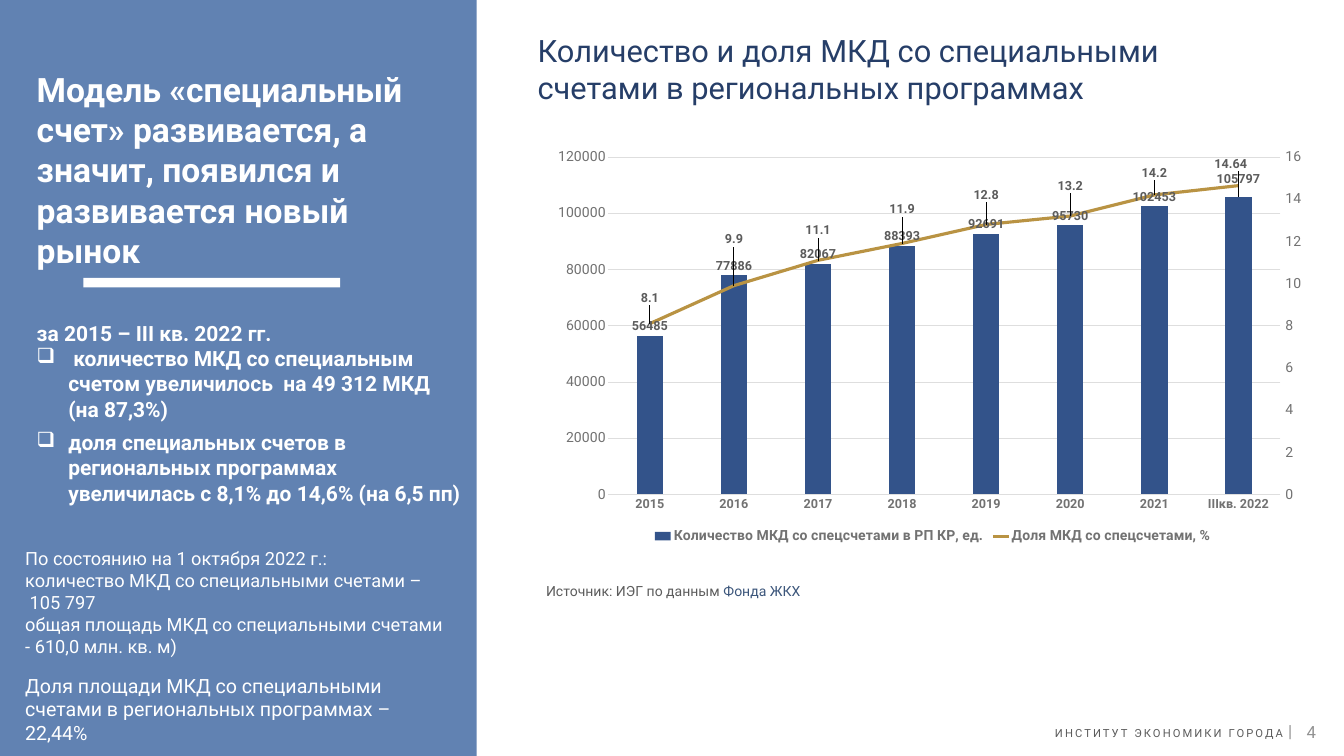
"""Build the slide on special accounts for apartment buildings."""
from pptx import Presentation
from pptx.chart.axis import ValueAxis
from pptx.chart.data import CategoryChartData
from pptx.dml.color import RGBColor
from pptx.enum.chart import XL_CHART_TYPE, XL_LABEL_POSITION, XL_LEGEND_POSITION, XL_MARKER_STYLE, XL_TICK_MARK
from pptx.enum.shapes import MSO_SHAPE
from pptx.enum.text import MSO_ANCHOR, PP_ALIGN
from pptx.oxml import parse_xml
from pptx.oxml.ns import nsdecls
from pptx.util import Pt

RECTANGLE = MSO_SHAPE.RECTANGLE
TOP, MIDDLE = MSO_ANCHOR.TOP, MSO_ANCHOR.MIDDLE
LEFT, RIGHT = PP_ALIGN.LEFT, PP_ALIGN.RIGHT
COLUMNS = XL_CHART_TYPE.COLUMN_CLUSTERED
ABOVE, OUTSIDE = XL_LABEL_POSITION.ABOVE, XL_LABEL_POSITION.OUTSIDE_END
LEGEND_BOTTOM = XL_LEGEND_POSITION.BOTTOM
NO_MARKER = XL_MARKER_STYLE.NONE
TICK_NONE, TICK_OUT = XL_TICK_MARK.NONE, XL_TICK_MARK.OUTSIDE

WHITE, PANEL, NAVY, LINK = "FFFFFF", "6182B2", "263E68", "3C567B"
TEXT, AXIS, NUMBER, GRID = "5C5C5C", "727272", "929292", "DEDEDE"
BAR, GOLD = "33538A", "B99343"

YEARS = ["2015", "2016", "2017", "2018", "2019", "2020", "2021", "IIIкв. 2022"]
COUNTS = [56485, 77886, 82067, 88393, 92691, 95730, 102453, 105797]
SHARES = [8.1, 9.9, 11.1, 11.9, 12.8, 13.2, 14.2, 14.64]
SHARE_SHIFTS = [(0, -0.04), (0, -0.09), (0, -0.05), (0, -0.06),
                (0, -0.05), (0, -0.05), (0, -0.03), (-0.01, -0.03)]

LINE_PLOT = f"""<c:lineChart {nsdecls("c")}><c:grouping val="standard"/><c:varyColors val="0"/>
<c:marker val="1"/><c:axId val="501"/><c:axId val="502"/></c:lineChart>"""
HIDDEN_AXIS = f"""<c:catAx {nsdecls("c")}><c:axId val="501"/>
<c:scaling><c:orientation val="minMax"/></c:scaling><c:delete val="1"/><c:axPos val="b"/>
<c:crossAx val="502"/><c:crosses val="autoZero"/></c:catAx>"""
RIGHT_AXIS = f"""<c:valAx {nsdecls("c")}><c:axId val="502"/>
<c:scaling><c:orientation val="minMax"/></c:scaling><c:delete val="0"/><c:axPos val="r"/>
<c:numFmt formatCode="General" sourceLinked="0"/><c:tickLblPos val="nextTo"/>
<c:crossAx val="501"/><c:crosses val="max"/></c:valAx>"""


def color(value):
    """Turn a hex string into a colour."""
    return RGBColor.from_string(value)


def layout(x, y, size=""):
    """Return a manual chart layout element."""
    modes = '<c:layoutTarget val="inner"/><c:xMode val="edge"/><c:yMode val="edge"/>' if size else ""
    return parse_xml(f'<c:layout {nsdecls("c")}><c:manualLayout>{modes}'
                     f'<c:x val="{x}"/><c:y val="{y}"/>{size}</c:manualLayout></c:layout>')


class Painter:
    """Hold the style and the current slide."""

    face = "Roboto"

    def __init__(self, page):
        self.page = page

    def font(self, font, size, tint, bold=False):
        """Style a font."""
        font.name, font.size, font.bold = self.face, Pt(size), bold
        font.color.rgb = color(tint)

    def block(self, left, top, width, height, tint):
        """Add a plain filled rectangle."""
        shape = self.page.shapes.add_shape(RECTANGLE, Pt(left), Pt(top), Pt(width), Pt(height))
        shape.shadow.inherit = False
        shape.fill.solid()
        shape.fill.fore_color.rgb = color(tint)
        shape.line.fill.background()

    def box(self, left, top, width, height, anchor=TOP, margins=(0, 0)):
        """Add an empty wrapping text box and return its frame."""
        frame = self.page.shapes.add_textbox(Pt(left), Pt(top), Pt(width), Pt(height)).text_frame
        frame.word_wrap, frame.vertical_anchor = True, anchor
        frame.margin_left = frame.margin_right = Pt(margins[0])
        frame.margin_top = frame.margin_bottom = Pt(margins[1])
        return frame

    def para(self, frame, text, size, tint, bold=False, before=0, after=0, bullet="", align=LEFT):
        """Fill the first empty paragraph or add another one."""
        para = frame.paragraphs[0] if not frame.text else frame.add_paragraph()
        para.alignment = align
        para.space_before, para.space_after = Pt(before), Pt(after)
        if bullet:
            properties = para._p.get_or_add_pPr()
            properties.set("marL", str(Pt(45)))
            properties.set("indent", str(-Pt(45)))
            properties.append(parse_xml(f'<a:buChar {nsdecls("a")} char="{bullet}"/>'))
        self.font(para.font, size, tint, bold)
        para.add_run().text = text
        return para

    def axis(self, axis, size, tick=TICK_NONE, bold=False, top=None):
        """Style a chart axis."""
        self.font(axis.tick_labels.font, size, AXIS, bold)
        axis.major_tick_mark, axis.minor_tick_mark = tick, TICK_NONE
        axis.format.line.fill.background()
        if top:
            axis.minimum_scale, axis.maximum_scale = 0, top

    def labels(self, series, position, shifts):
        """Show bold values, moving the labels listed by point."""
        labels = series.data_labels
        labels.show_value, labels.position = True, position
        self.font(labels.font, 18, TEXT, True)
        for index, shift in shifts.items():
            label = series.points[index].data_label
            label.position = position
            self.font(label.font, 18, TEXT, True)
            element = series._element.xpath(f'c:dLbls/c:dLbl[c:idx/@val="{index}"]')[0]
            element.insert(1, layout(*shift))

    def chart(self, left, top, width, height):
        """Add columns of counts with a line of shares on a right axis."""
        data = CategoryChartData()
        data.categories = YEARS
        data.add_series("Количество МКД со спецсчетами в РП КР, ед.", COUNTS)
        data.add_series("Доля МКД со спецсчетами, %", SHARES)
        chart = self.page.shapes.add_chart(COLUMNS, Pt(left), Pt(top), Pt(width), Pt(height), data).chart
        chart.has_title = False
        self.font(chart.font, 10, "262626")
        chart.has_legend = True
        chart.legend.position, chart.legend.include_in_layout = LEGEND_BOTTOM, False
        self.font(chart.legend.font, 20, AXIS, True)

        self.axis(chart.category_axis, 18, bold=True)
        edge = chart.category_axis.format.line
        self.axis(chart.value_axis, 20, top=120000)
        grid = chart.value_axis.major_gridlines.format.line
        for line in (edge, grid):
            line.color.rgb, line.width = color(GRID), Pt(0.75)
        chart.value_axis.major_unit = 20000

        area = chart.element.xpath("c:chart/c:plotArea")[0]
        for old in area.xpath("c:layout"):
            area.remove(old)
        area.insert(0, layout(0.08, 0.04, '<c:w val="0.87"/><c:h val="0.83"/>'))
        columns = chart.plots[0]
        columns.gap_width, columns.overlap, columns.vary_by_categories = 219, -27, False
        moved = columns._element.xpath("c:ser")[1]
        for flag in moved.xpath("c:invertIfNegative"):
            moved.remove(flag)
        line_plot = parse_xml(LINE_PLOT)
        line_plot.insert(2, moved)
        columns._element.addnext(line_plot)
        right = parse_xml(RIGHT_AXIS)
        area.xpath("c:valAx")[0].addnext(right)
        right.addnext(parse_xml(HIDDEN_AXIS))
        self.axis(ValueAxis(right), 20, TICK_OUT, top=16)
        ValueAxis(right).major_unit = 2

        counts, shares = chart.plots[0].series[0], chart.plots[1].series[0]
        counts.format.fill.solid()
        counts.format.fill.fore_color.rgb = color(BAR)
        shares.format.line.color.rgb, shares.format.line.width = color(GOLD), Pt(4.5)
        shares.smooth, shares.marker.style = False, NO_MARKER
        self.labels(counts, OUTSIDE, {7: (0, -0.02)})
        self.labels(shares, ABOVE, dict(enumerate(SHARE_SHIFTS)))


def main():
    """Build and save the deck."""
    deck = Presentation()
    deck.slide_width, deck.slide_height = Pt(1920), Pt(1080)
    painter = Painter(deck.slides.add_slide(deck.slide_layouts[6]))

    painter.para(painter.box(1847.5, 1016, 72.5, 57.5, MIDDLE, (19, 9.5)), "4", 24, NUMBER)
    painter.para(painter.box(1840, 1029.5, 18, 29, MIDDLE), "|", 24, NUMBER)
    footer = painter.para(painter.box(1482.5, 1034.5, 358, 27, margins=(7.2, 3.6)),
                          "ИНСТИТУТ ЭКОНОМИКИ ГОРОДА", 16, TEXT, align=RIGHT)
    footer.runs[0]._r.get_or_add_rPr().set("spc", "300")

    painter.block(0, 0, 681, 1080, PANEL)
    source = painter.para(painter.box(780, 826, 1070, 37, MIDDLE), "Источник: ИЭГ по данным ", 20, TEXT)
    span = source.add_run()
    span.text, span.font.color.rgb = "Фонда ЖКХ", color(LINK)
    painter.para(painter.box(768, 38, 1070, 121, MIDDLE),
                 "Количество и доля МКД со специальными счетами в региональных программах", 44, NAVY)

    message = painter.box(52.5, 98, 605.5, 667)
    painter.para(message, "Модель «специальный счет» развивается, а значит, появился и развивается новый рынок",
                 48, WHITE, True)
    painter.para(message, "за 2015 – III кв. 2022 гг.", 30, WHITE, True, before=72)
    painter.para(message, " количество МКД со специальным счетом увеличилось  на 49 312 МКД (на 87,3%)",
                 30, WHITE, True, after=12, bullet="❑")
    painter.para(message, "доля специальных счетов в региональных программах увеличилась с 8,1% до 14,6% (на 6,5 пп)",
                 30, WHITE, True, bullet="❑")
    painter.block(119, 397, 367, 13.5, WHITE)

    status = painter.box(29, 779, 623, 257, margins=(7.2, 3.6))
    for text in ("По состоянию на 1 октября 2022 г.:", "количество МКД со специальными счетами –", " 105 797",
                 "общая площадь МКД со специальными счетами - 610,0 млн. кв. м)"):
        painter.para(status, text, 26, WHITE)
    painter.para(status, "Доля площади МКД со специальными счетами в региональных программах – 22,44%",
                 28, WHITE, before=24)

    painter.chart(780, 201, 1104.5, 581)
    deck.save("out.pptx")


if __name__ == "__main__":
    main()
